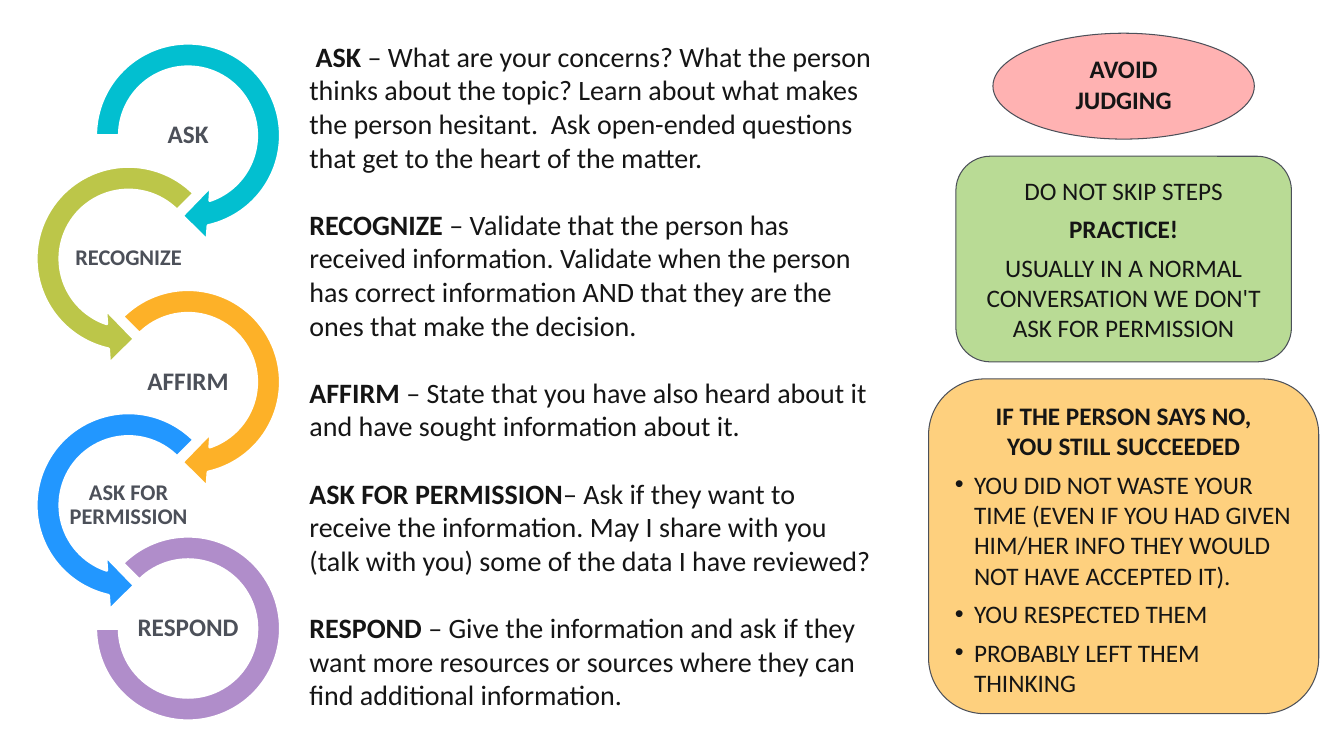
from lxml.etree import SubElement
from pptx import Presentation
from pptx.dml.color import RGBColor
from pptx.enum.shapes import MSO_SHAPE as Preset
from pptx.enum.text import MSO_ANCHOR as Anchor, PP_ALIGN as Align
from pptx.oxml.ns import qn
from pptx.util import Inches, Pt

WIDTH, HEIGHT = Inches(13.33), Inches(7.5)
INK, SLATE, WHITE = "151515", "4C5059", "FFFFFF"
FONT = "Calibri"

STEPS = [
    ("ASK", 18, 0.56, Preset.CIRCULAR_ARROW, (45, 108), "02BFD0", 100),
    ("RECOGNIZE", 16, 0.56, Preset.LEFT_CIRCULAR_ARROW, (63, 189), "BCC649", 100),
    ("AFFIRM", 18, 0.56, Preset.CIRCULAR_ARROW, (45, 135), "FDB128", 100),
    ("ASK FOR PERMISSION", 16, 0.65, Preset.LEFT_CIRCULAR_ARROW, (63, 189), "2297FF", 100),
    ("RESPOND", 18, 0.56, Preset.BLOCK_ARC, (135, 108), "7030A0", 55),
]
EXPLANATIONS = [
    (" ASK ", "– What are your concerns? What the person thinks about the topic? "
     "Learn about what makes the person hesitant.  Ask open-ended questions "
     "that get to the heart of the matter."),
    ("RECOGNIZE", " – Validate that the person has received information. Validate when "
     "the person has correct information AND that they are the ones that make the decision."),
    ("AFFIRM ", "– State that you have also heard about it and have sought information about it."),
    ("ASK FOR PERMISSION", "– Ask if they want to receive the information. May I share with you "
     "(talk with you) some of the data I have reviewed?"),
    ("RESPOND", " – Give the information and ask if they want more resources or sources "
     "where they can find additional information."),
]
TIPS = [
    (Preset.OVAL, 67, 15.56, "FF0000", 30, Anchor.TOP, [("AVOID JUDGING", True, False)]),
    (Preset.ROUNDED_RECTANGLE, 86, 30.22, "B9DB95", 100, Anchor.MIDDLE, [
        ("DO NOT SKIP STEPS", False, False),
        ("PRACTICE!", True, False),
        ("USUALLY IN A NORMAL CONVERSATION WE DON'T ASK FOR PERMISSION", False, False),
    ]),
    (Preset.ROUNDED_RECTANGLE, 100, 49.19, "FED07E", 100, Anchor.TOP, [
        ("IF THE PERSON SAYS NO,\vYOU STILL SUCCEEDED", True, False),
        ("YOU DID NOT WASTE YOUR TIME (EVEN IF YOU HAD GIVEN HIM/HER INFO "
         "THEY WOULD NOT HAVE ACCEPTED IT).", False, True),
        ("YOU RESPECTED THEM", False, True),
        ("PROBABLY LEFT THEM THINKING", False, True),
    ]),
]


def share(left, top, width, height):
    return [int(part * whole / 100) for part, whole in
            zip((left, top, width, height), (WIDTH, HEIGHT, WIDTH, HEIGHT))]


def centred(x, y, width, height):
    return [int(v) for v in (x - width / 2, y - height / 2, width, height)]


def paint(color_format, color):
    color_format.rgb = RGBColor.from_string(color)


def add_outline(slide, preset, box, fill, opacity, line, weight):
    outline = slide.shapes.add_shape(preset, *box)
    outline.shadow.inherit = False
    outline.fill.solid()
    paint(outline.fill.fore_color, fill)
    if opacity < 100:
        tint = outline.fill._xPr.find(qn("a:solidFill"))[0]
        SubElement(tint, qn("a:alpha"), val=str(opacity * 1000))
    paint(outline.line.color, line)
    outline.line.width = Pt(weight)
    return outline


def style(paragraph, size, color, bold=None):
    font = paragraph.font
    font.name, font.size, font.bold = FONT, Pt(size), bold
    paint(font.color, color)


def add_bullet(paragraph):
    properties = paragraph._p.get_or_add_pPr()
    indent = Inches(0.19)
    properties.set("marL", str(indent))
    properties.set("indent", str(-indent))
    SubElement(properties, qn("a:buFont"), typeface="Arial")
    SubElement(properties, qn("a:buChar"), char="•")


def add_step_chain(slide, box):
    left, top, width, height = box
    diameter = width * 0.783
    pitch = (height - diameter) / (len(STEPS) - 1)
    for index, (name, size, label_share, preset, angles, color, opacity) in enumerate(STEPS):
        x = left + diameter / 2 + (width - diameter) * (index % 2 == 0)
        y = top + diameter / 2 + pitch * index
        closing = preset == Preset.BLOCK_ARC
        ring_size = diameter * (0.86 if closing else 1)
        ring = add_outline(slide, preset, centred(x, y, ring_size, ring_size),
                           color, opacity, WHITE, 2)
        settings = (*angles, 0.127) if closing else (0.11, 11.423, *angles, 0.125)
        for position, setting in enumerate(settings):
            ring.adjustments[position] = setting
        label = slide.shapes.add_textbox(
            *centred(x, y, diameter * label_share, diameter * 0.28)).text_frame
        label.word_wrap = True
        label.vertical_anchor = Anchor.MIDDLE
        label.margin_left = label.margin_right = Inches(0.01)
        label.margin_top = label.margin_bottom = Inches(0.01)
        caption = label.paragraphs[0]
        caption.text = name
        caption.alignment = Align.CENTER
        caption.line_spacing = 0.9
        style(caption, size, SLATE, True)


def add_explanations(slide, box):
    body = slide.shapes.add_textbox(*box).text_frame
    body.word_wrap = True
    for index, (step, meaning) in enumerate(EXPLANATIONS):
        entry = body.add_paragraph() if index else body.paragraphs[0]
        if index:
            entry.space_before = Pt(24)
        for words, bold in ((step, True), (meaning, False)):
            run = entry.add_run()
            run.text = words
            run.font.bold = bold
        style(entry, 20, INK)


def add_tips(slide, box):
    left, top, width, height = box
    gap = (100 - sum(tip[2] for tip in TIPS)) / (len(TIPS) - 1)
    row = 0
    for preset, columns, rows, fill, opacity, anchor, lines in TIPS:
        place = centred(left + width / 2, top + height * (row + rows / 2) / 100,
                        width * columns / 100, height * rows / 100)
        tip = add_outline(slide, preset, place, fill, opacity, SLATE, 0.75).text_frame
        tip.word_wrap = True
        tip.vertical_anchor = anchor
        for index, (words, bold, bulleted) in enumerate(lines):
            line = tip.add_paragraph() if index else tip.paragraphs[0]
            line.text = words
            line.alignment = Align.LEFT if bulleted else Align.CENTER
            if len(lines) > 1:
                line.space_after = Pt(6)
            if bulleted:
                add_bullet(line)
            style(line, 18, INK, bold)
        row += rows + gap


def main():
    deck = Presentation()
    deck.slide_width, deck.slide_height = WIDTH, HEIGHT
    slide = deck.slides.add_slide(deck.slide_layouts[6])
    add_step_chain(slide, share(1.58, 3.73, 20.4, 93.6))
    add_explanations(slide, share(22.28, 4.53, 44.04, 91.07))
    add_tips(slide, share(69.09, 4.4, 29.03, 90))
    deck.save("out.pptx")


if __name__ == "__main__":
    main()
